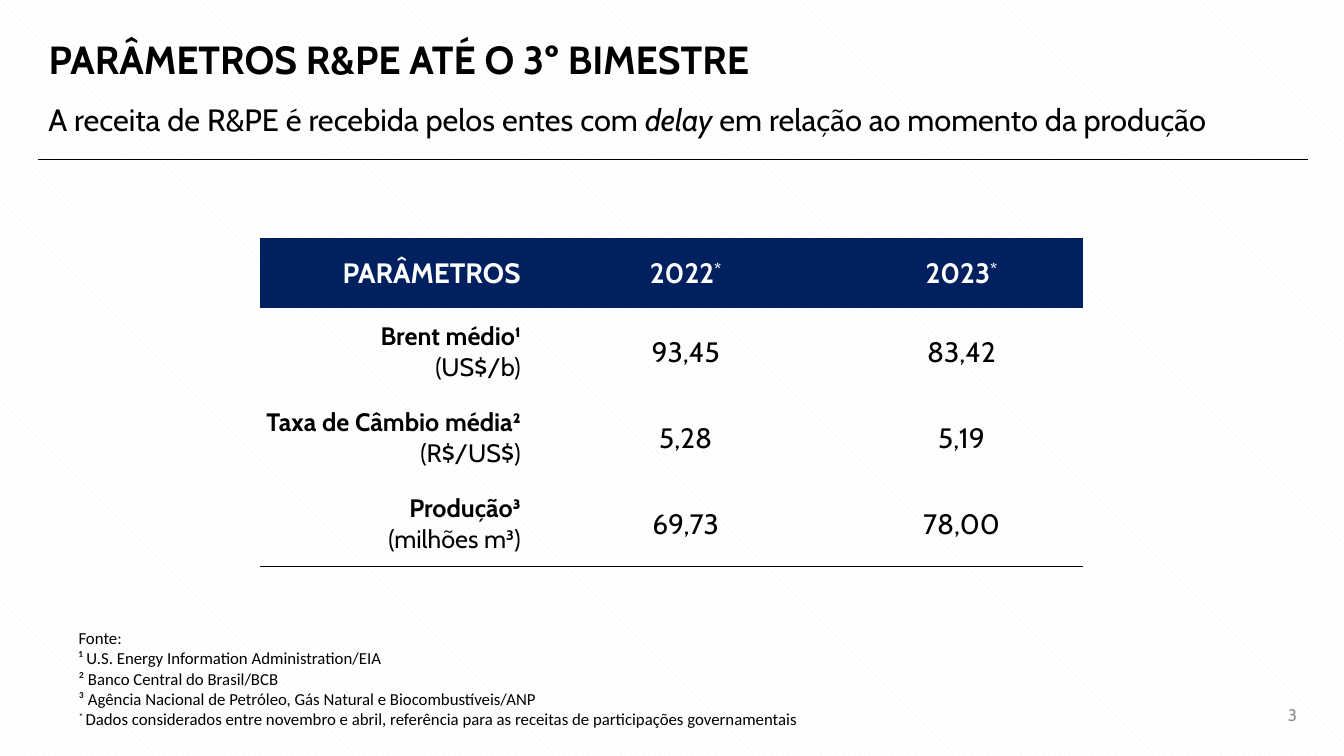
"""Build the slide on oil revenue parameters."""
from dataclasses import dataclass

from lxml.etree import SubElement
from pptx import Presentation
from pptx.dml.color import RGBColor
from pptx.enum.dml import MSO_PATTERN
from pptx.enum.shapes import MSO_CONNECTOR
from pptx.enum.text import MSO_ANCHOR, PP_ALIGN
from pptx.oxml.ns import qn
from pptx.util import Cm, Pt


@dataclass(frozen=True)
class Theme:
    ink: str = "000000"
    navy: str = "002060"
    white: str = "FFFFFF"
    hatch: str = "F2F2F2"
    gray: str = "8C8C8C"
    face: str = "Cabin"
    plain: str = "Calibri"
    title: int = 28
    lead: int = 22
    value: int = 20
    label: int = 18
    note: int = 12


THEME = Theme()


@dataclass(frozen=True)
class Span:
    text: str
    size: int
    color: str = THEME.ink
    face: str = THEME.face
    bold: bool = False
    italic: bool = False
    raised: bool = False


@dataclass(frozen=True)
class Box:
    left: float
    top: float
    width: float
    height: float


@dataclass(frozen=True)
class Row:
    name: str
    unit: str
    old: str
    new: str


ROWS = (
    Row("Brent médio¹", "(US$/b)", "93,45", "83,42"),
    Row("Taxa de Câmbio média²", "(R$/US$)", "5,28", "5,19"),
    Row("Produção³", "(milhões m³)", "69,73", "78,00"),
)
NOTES = (
    "Fonte:",
    "¹ U.S. Energy Information Administration/EIA",
    "² Banco Central do Brasil/BCB",
    "³ Agência Nacional de Petróleo, Gás Natural e Biocombustíveis/ANP",
)
LAST = "Dados considerados entre novembro e abril, referência para as receitas de participações governamentais"
WIDTHS = (6.6, 1.5, 5.26, 1.27, 6.1)
HEIGHTS = (1.78, 2.17, 2.17, 2.17)


def write(frame, lines: list[list[Span]], align=PP_ALIGN.LEFT, space: float = 1.0) -> None:
    """Fill a text frame with one paragraph per line."""
    for index, line in enumerate(lines):
        para = frame.add_paragraph() if index else frame.paragraphs[0]
        para.alignment = align
        para.line_spacing = space
        for span in line:
            run = para.add_run()
            run.text = span.text
            font = run.font
            font.name, font.size = span.face, Pt(span.size)
            font.bold, font.italic = span.bold, span.italic
            font.color.rgb = RGBColor.from_string(span.color)
            if span.raised:
                run._r.get_or_add_rPr().set("baseline", "30000")


def place(shape, box: Box, anchor=MSO_ANCHOR.MIDDLE):
    """Set the shape's place and return its wrapped text frame."""
    shape.left, shape.top = Cm(box.left), Cm(box.top)
    shape.width, shape.height = Cm(box.width), Cm(box.height)
    frame = shape.text_frame
    frame.word_wrap = True
    frame.vertical_anchor = anchor
    return frame


def label(slide, box: Box, anchor=MSO_ANCHOR.MIDDLE):
    """Add a text box and return its text frame."""
    return place(slide.shapes.add_textbox(0, 0, 0, 0), box, anchor)


def edge(cell, ruled: bool) -> None:
    """Give the cell a bottom rule or no border at all."""
    props = cell._tc.get_or_add_tcPr()
    for side in ("lnL", "lnR", "lnT", "lnB"):
        line = SubElement(props, qn(f"a:{side}"), w=str(Pt(0.75)))
        if ruled and side == "lnB":
            fill = SubElement(line, qn("a:solidFill"))
            SubElement(fill, qn("a:srgbClr"), val=THEME.ink)
        else:
            SubElement(line, qn("a:noFill"))


def fill_cell(cell, head: bool, lines: list[list[Span]], align) -> None:
    """Format one table cell and write its lines."""
    cell.margin_left = cell.margin_right = cell.margin_top = Cm(0.03)
    cell.margin_bottom = 0
    cell.vertical_anchor = MSO_ANCHOR.MIDDLE
    edge(cell, not head)
    if head:
        cell.fill.solid()
        cell.fill.fore_color.rgb = RGBColor.from_string(THEME.navy)
    else:
        cell.fill.background()
    write(cell.text_frame, lines, align)


def year(text: str) -> list[list[Span]]:
    """Return a year heading with its raised asterisk."""
    return [[Span(text, THEME.value, THEME.white, bold=True),
             Span("*", THEME.value, THEME.white, bold=True, raised=True)]]


def add_grid(slide) -> None:
    """Add the table of parameters."""
    grid = slide.shapes.add_table(len(HEIGHTS), len(WIDTHS), Cm(6.55), Cm(5.99),
                                  Cm(sum(WIDTHS)), Cm(sum(HEIGHTS))).table
    grid.horz_banding = False
    for column, width in zip(grid.columns, WIDTHS):
        column.width = Cm(width)
    for row, height in zip(grid.rows, HEIGHTS):
        row.height = Cm(height)
    table = [[[[Span("PARÂMETROS", THEME.value, THEME.white, bold=True)]],
              [], year("2022"), [], year("2023")]]
    for item in ROWS:
        name = [[Span(item.name, THEME.label, bold=True)], [Span(item.unit, THEME.label)]]
        old, new = ([[Span(text, THEME.value)]] for text in (item.old, item.new))
        table.append([name, [], old, [], new])
    for r, cells in enumerate(table):
        for c, lines in enumerate(cells):
            align = PP_ALIGN.CENTER if c else PP_ALIGN.RIGHT
            fill_cell(grid.cell(r, c), r == 0, lines, align)


def add_rule(slide) -> None:
    """Add the line below the heading."""
    rule = slide.shapes.add_connector(MSO_CONNECTOR.STRAIGHT, Cm(0.97), Cm(4.01), Cm(32.97), Cm(4.01))
    rule.line.color.rgb = RGBColor.from_string(THEME.ink)
    rule.line.width = Pt(0.5)
    SubElement(rule._element.spPr, qn("a:effectLst"))


def main() -> None:
    """Build and save the slide."""
    deck = Presentation()
    deck.slide_width, deck.slide_height = Cm(33.87), Cm(19.05)
    slide = deck.slides.add_slide(deck.slide_layouts[5])
    back = slide.background.fill
    back.patterned()
    back.pattern = MSO_PATTERN.WIDE_DOWNWARD_DIAGONAL
    back.fore_color.rgb = RGBColor.from_string(THEME.hatch)
    back.back_color.rgb = RGBColor.from_string(THEME.white)

    title = place(slide.shapes.title, Box(0.97, 0.56, 19.94, 2.01))
    write(title, [[Span("PARÂMETROS R&PE ATÉ O 3º BIMESTRE", THEME.title, bold=True)]], space=0.9)
    lead = label(slide, Box(0.97, 2.16, 32, 1.5))
    write(lead, [[Span("A receita de R&PE é recebida pelos entes com ", THEME.lead),
                  Span("delay ", THEME.lead, italic=True),
                  Span("em relação ao momento da produção", THEME.lead)]], space=1.2)
    add_rule(slide)
    add_grid(slide)
    notes = [[Span(text, THEME.note, face=THEME.plain)] for text in NOTES]
    notes.append([Span("*\u00a0", THEME.note, face=THEME.plain, raised=True),
                  Span(LAST, THEME.note, face=THEME.plain)])
    write(label(slide, Box(1.73, 15.7, 29.46, 2.9), MSO_ANCHOR.TOP), notes)
    write(label(slide, Box(30.5, 17.5, 2.44, 1.02)),
          [[Span("3", THEME.note, THEME.gray)]], PP_ALIGN.RIGHT)
    deck.save("out.pptx")


if __name__ == "__main__":
    main()
